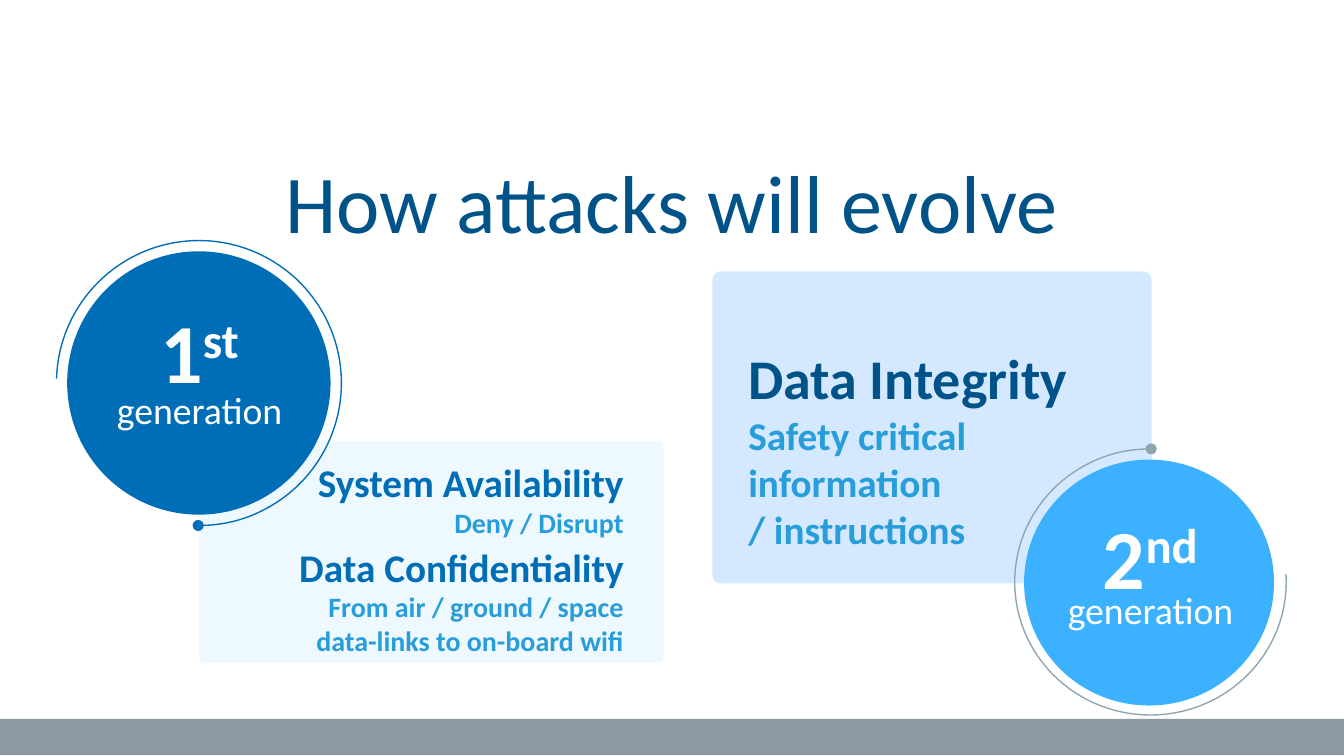
from pptx import Presentation
from pptx.dml.color import RGBColor
from pptx.enum.shapes import MSO_SHAPE as SHAPE
from pptx.enum.text import PP_ALIGN as ALIGN
from pptx.oxml.ns import qn
from pptx.util import Inches, Pt
from lxml.etree import SubElement

THEME = dict(
    font="Calibri", white="FFFFFF", footer="8C99A1", title="005389",
    blue="006EB7", sky="3BB1FF", detail="279DD9", grey="8FA6B1",
    pale="BEE5FF", soft="BADDFF",
    title_size=44, number_size=45, caption_size=20.2,
    lead_size=30, head_size=21, detail_size=15,
)

TITLE = "How attacks will evolve"
FIRST = dict(
    card=(1.48, 3.28, 3.46, 1.65), card_color="pale", alpha=26, corner=0.028,
    disc=(0.5, 1.87, 1.96, 1.96), disc_color="blue",
    ring=(0.42, 1.79, 2.12, 2.12), ring_color="blue", angles=(181.8, 90.3),
    number=("1", "st"), number_box=(0.6, 2.18, 1.77, 0.86),
    caption="generation", caption_box=(0.6, 2.83, 1.77, 0.44),
    align=ALIGN.RIGHT,
    # box, wrap, heading, heading size, heading colour, detail, detail size
    notes=[
        ((2.24, 3.36, 2.5, 0.71), False, "System Availability", "head_size", "blue",
         "Deny / Disrupt", "detail_size"),
        ((1.93, 3.99, 2.81, 0.96), True, "Data Confidentiality", "head_size", "blue",
         "From air / ground / space data-links to on-board wifi", "detail_size"),
    ],
)
SECOND = dict(
    card=(5.3, 2.02, 3.27, 2.32), card_color="soft", alpha=62, corner=0.026,
    disc=(7.62, 3.42, 1.86, 1.83), disc_color="sky",
    ring=(7.55, 3.34, 2.02, 1.98), ring_color="grey", angles=(356.6, 270.3),
    number=("2", "nd"), number_box=(7.72, 3.71, 1.68, 0.8),
    caption="generation", caption_box=(7.72, 4.32, 1.68, 0.41),
    align=ALIGN.LEFT,
    notes=[
        ((5.47, 2.51, 2.74, 1.56), True, "Data Integrity", "lead_size", "title",
         "Safety critical information\v/ instructions", "head_size"),
    ],
)


def color(name):
    return RGBColor.from_string(THEME[name])


def add_filled(shapes, kind, box, fill, alpha=None):
    sp = shapes.add_shape(kind, *map(Inches, box))
    sp.shadow.inherit = False
    sp.line.fill.background()
    sp.fill.solid()
    sp.fill.fore_color.rgb = color(fill)
    if alpha is not None:
        clr = sp.fill._xPr.find(qn("a:solidFill"))[0]
        SubElement(clr, qn("a:alpha"), val=str(alpha * 1000))
    return sp


def add_ring(shapes, box, line, angles):
    """Draw an open arc clockwise between two angles, with a dot at its end."""
    sp = shapes.add_shape(SHAPE.ARC, *map(Inches, box))
    sp.shadow.inherit = False
    sp.fill.background()
    for i, angle in enumerate(angles):
        sp.adjustments[i] = angle * 0.6
    sp.line.color.rgb = color(line)
    sp.line.width = Pt(0.75)
    SubElement(sp.line._get_or_add_ln(), qn("a:tailEnd"), type="oval")


def add_text(shapes, box, paragraphs, align=ALIGN.CENTER, bold=False,
             wrap=True, superscript=None):
    """Each paragraph is (text, size name, colour name)."""
    tf = shapes.add_textbox(*map(Inches, box)).text_frame
    tf.word_wrap = wrap
    for i, (text, size, fill) in enumerate(paragraphs):
        p = tf.add_paragraph() if i else tf.paragraphs[0]
        p.alignment = align
        p.text = text
        if superscript:
            r = p.add_run()
            r.text = superscript
            r.font._element.set("baseline", "30000")
        for r in p.runs:
            r.font.name = THEME["font"]
            r.font.size = Pt(THEME[size])
            r.font.bold = bold
            r.font.color.rgb = color(fill)


def add_generation(shapes, g):
    card = add_filled(shapes, SHAPE.ROUNDED_RECTANGLE, g["card"], g["card_color"], g["alpha"])
    card.adjustments[0] = g["corner"]
    add_filled(shapes, SHAPE.OVAL, g["disc"], g["disc_color"])
    number, suffix = g["number"]
    add_text(shapes, g["number_box"], [(number, "number_size", "white")],
             bold=True, superscript=suffix)
    add_text(shapes, g["caption_box"], [(g["caption"], "caption_size", "white")])
    for box, wrap, head, head_size, head_color, detail, detail_size in g["notes"]:
        add_text(shapes, box,
                 [(head, head_size, head_color), (detail, detail_size, "detail")],
                 align=g["align"], bold=True, wrap=wrap)
    add_ring(shapes, g["ring"], g["ring_color"], g["angles"])


prs = Presentation()
prs.slide_width = Inches(10)
prs.slide_height = prs.slide_width * 9 // 16
s = prs.slides.add_slide(prs.slide_layouts[6])

add_filled(s.shapes, SHAPE.RECTANGLE, (0, 5.35, 10, 0.27), "footer")
add_generation(s.shapes, FIRST)
add_generation(s.shapes.add_group_shape().shapes, SECOND)
add_text(s.shapes, (0.5, 1.08, 9, 0.94), [(TITLE, "title_size", "title")])

prs.save("out.pptx")
